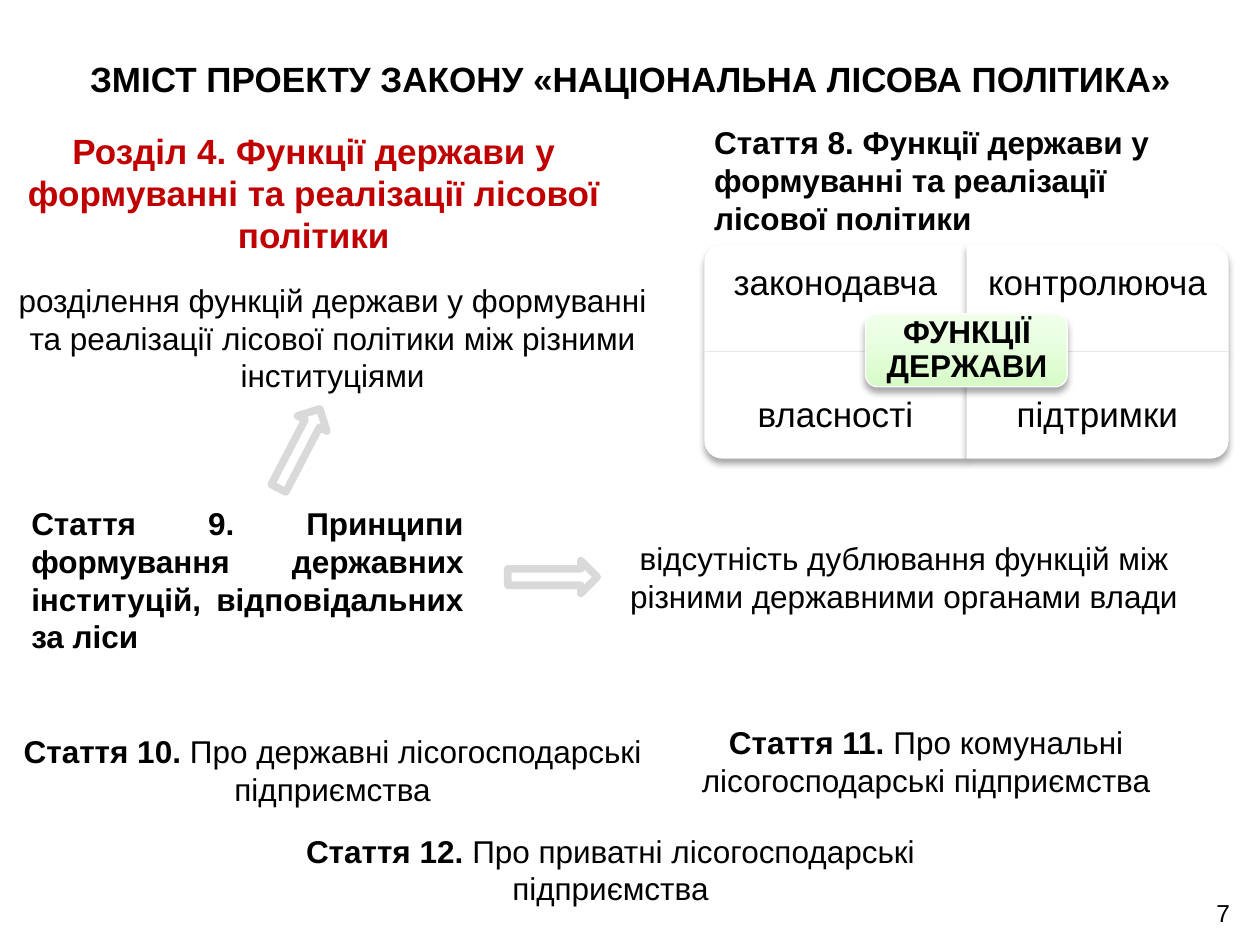
from lxml import etree
from pptx import Presentation
from pptx import util as u
from pptx.dml import color
from pptx.enum import shapes, text
from pptx.oxml import ns

LEFT, CENTER = text.PP_ALIGN.LEFT, text.PP_ALIGN.CENTER
RIGHT, JUSTIFY = text.PP_ALIGN.RIGHT, text.PP_ALIGN.JUSTIFY
TOP, MIDDLE = text.MSO_ANCHOR.TOP, text.MSO_ANCHOR.MIDDLE
BOTTOM = text.MSO_ANCHOR.BOTTOM


def rgb(value):
    return color.RGBColor.from_string(value)


def inches(*lengths):
    return [u.Inches(length) for length in lengths]


def add_element(parent, tag, **attributes):
    return etree.SubElement(parent, ns.qn(tag), {k: str(v) for k, v in attributes.items()})


class SlideBuilder:
    FONT = "Arial"
    BLACK, WHITE, RED, GREY = "000000", "FFFFFF", "C00000", "D9D9D9"

    def __init__(self, slide):
        self.slide = slide

    def title(self, at, wording, size):
        heading = self.slide.shapes.title
        heading.left, heading.top, heading.width, heading.height = inches(*at)
        self.set_text(heading.text_frame, [(wording, True)], size, CENTER, MIDDLE)

    def text(self, at, parts, size=18, align=CENTER, anchor=TOP, ink=BLACK,
             inset=None, line_spacing=None):
        frame = self.slide.shapes.add_textbox(*inches(*at)).text_frame
        if inset is not None:
            frame.margin_left = frame.margin_right = u.Inches(inset)
            frame.margin_top = frame.margin_bottom = u.Inches(inset)
        self.set_text(frame, parts, size, align, anchor, ink, line_spacing)

    def set_text(self, frame, parts, size, align, anchor, ink=BLACK, line_spacing=None):
        frame.word_wrap = True
        frame.vertical_anchor = anchor
        paragraph = frame.paragraphs[0]
        paragraph.alignment = align
        paragraph.line_spacing = line_spacing
        for wording, bold in parts:
            run = paragraph.add_run()
            run.text = wording
            run.font.name = self.FONT
            run.font.size = u.Pt(size)
            run.font.bold = bold
            run.font.color.rgb = rgb(ink)

    def shape(self, preset, at, rotation=0, line=None, line_width=0.75, shadow=False):
        figure = self.slide.shapes.add_shape(preset, *inches(*at))
        figure.rotation = rotation
        figure.fill.solid()
        figure.fill.fore_color.rgb = rgb(self.WHITE)
        if line:
            figure.line.color.rgb = rgb(line)
            figure.line.width = u.Pt(line_width)
        else:
            figure.line.fill.background()
        figure.shadow.inherit = False
        if shadow:
            self.cast_shadow(figure)
        return figure

    def cast_shadow(self, figure):
        effects = figure.element.spPr.find(ns.qn("a:effectLst"))
        outer = add_element(effects, "a:outerShdw", blurRad=u.Pt(4), dist=u.Pt(3),
                            dir=90 * 60000, rotWithShape=0)
        tint = add_element(outer, "a:srgbClr", val=self.BLACK)
        add_element(tint, "a:alpha", val=35000)

    def gradient(self, figure, stops, angle):
        figure.fill.gradient()
        fill = figure.element.spPr.find(ns.qn("a:gradFill"))
        stop_list = fill.find(ns.qn("a:gsLst"))
        for old_stop in list(stop_list):
            stop_list.remove(old_stop)
        for position, value in stops:
            stop = add_element(stop_list, "a:gs", pos=position * 1000)
            add_element(stop, "a:srgbClr", val=value)
        fill.find(ns.qn("a:lin")).set("ang", str(angle * 60000))

    def quadrant(self, left, top, width, height, rotation, label_top, label):
        if rotation % 180:
            shift = (width - height) / 2
            at = left + shift, top - shift, height, width
        else:
            at = left, top, width, height
        self.shape(shapes.MSO_SHAPE.ROUND_1_RECTANGLE, at, rotation, shadow=True)
        self.text((left, label_top, width, 0.63), [(label, False)], 20,
                  anchor=MIDDLE, inset=0.16, line_spacing=0.9)

    def function_matrix(self, left, top, width, height, quadrants, core):
        for index, (label, rotation) in enumerate(quadrants):
            row, column = divmod(index, 2)
            self.quadrant(left + column * width, top + row * height, width, height,
                          rotation, top + row * 1.05, label)
        core_box = self.shape(shapes.MSO_SHAPE.ROUNDED_RECTANGLE, (6.87, 2.49, 1.6, 0.58),
                              line=self.WHITE, shadow=True)
        self.gradient(core_box, [(0, "D6FBC7"), (65, "EAFFE1"), (100, "F0FFEA")], 270)
        self.text((6.9, 2.52, 1.55, 0.52), [(core, True)], anchor=MIDDLE,
                  inset=0.07, line_spacing=0.9)

    def arrow(self, left, top, rotation=0):
        self.shape(shapes.MSO_SHAPE.RIGHT_ARROW, (left, top, 0.71, 0.26), rotation,
                   line=self.GREY, line_width=4.33)


def main():
    deck = Presentation()
    deck.slide_width, deck.slide_height = inches(10, 7.5)
    page = SlideBuilder(deck.slides.add_slide(deck.slide_layouts[5]))

    page.title((0.28, 0, 9.45, 1.25),
               "ЗМІСТ ПРОЕКТУ ЗАКОНУ «НАЦІОНАЛЬНА ЛІСОВА ПОЛІТИКА»", 20)

    topic = "Функції держави у формуванні та реалізації лісової політики"
    page.text((0, 0.98, 4.98, 1.11), [(f"Розділ 4. {topic}", True)], 20, ink=page.RED)
    page.text((5.57, 0.93, 4.16, 1.01), [(f"Стаття 8. {topic}", True)], align=LEFT)

    functions = [("законодавча", 270), ("контролююча", 0),
                 ("власності", 180), ("підтримки", 90)]
    page.function_matrix(5.59, 1.94, 2.08, 0.85, functions, "ФУНКЦІЇ ДЕРЖАВИ")

    page.text((0.15, 3.95, 3.63, 1.31),
              [("Стаття 9. Принципи формування державних інституцій, "
                "відповідальних за ліси", True)], align=JUSTIFY)
    page.text((0, 2.18, 5.28, 1.01),
              [("розділення функцій держави у формуванні та реалізації "
                "лісової політики між різними інституціями", False)])
    page.text((4.76, 4.23, 4.83, 0.71),
              [("відсутність дублювання функцій між різними "
                "державними органами влади", False)])

    enterprise_articles = [
        (10, "державні", (0, 5.76, 5.28, 0.71)),
        (11, "комунальні", (4.84, 5.69, 5.02, 0.71)),
        (12, "приватні", (2.1, 6.55, 5.49, 0.71)),
    ]
    for number, ownership, at in enterprise_articles:
        page.text(at, [(f"Стаття {number}. ", True),
                       (f"Про {ownership} лісогосподарські підприємства", False)])

    page.text((9.46, 7.01, 0.4, 0.4), [("7", False)], 14, RIGHT, BOTTOM)

    page.arrow(2.02, 3.43, 297.5)
    page.arrow(4.03, 4.45)

    deck.save("out.pptx")


if __name__ == "__main__":
    main()
